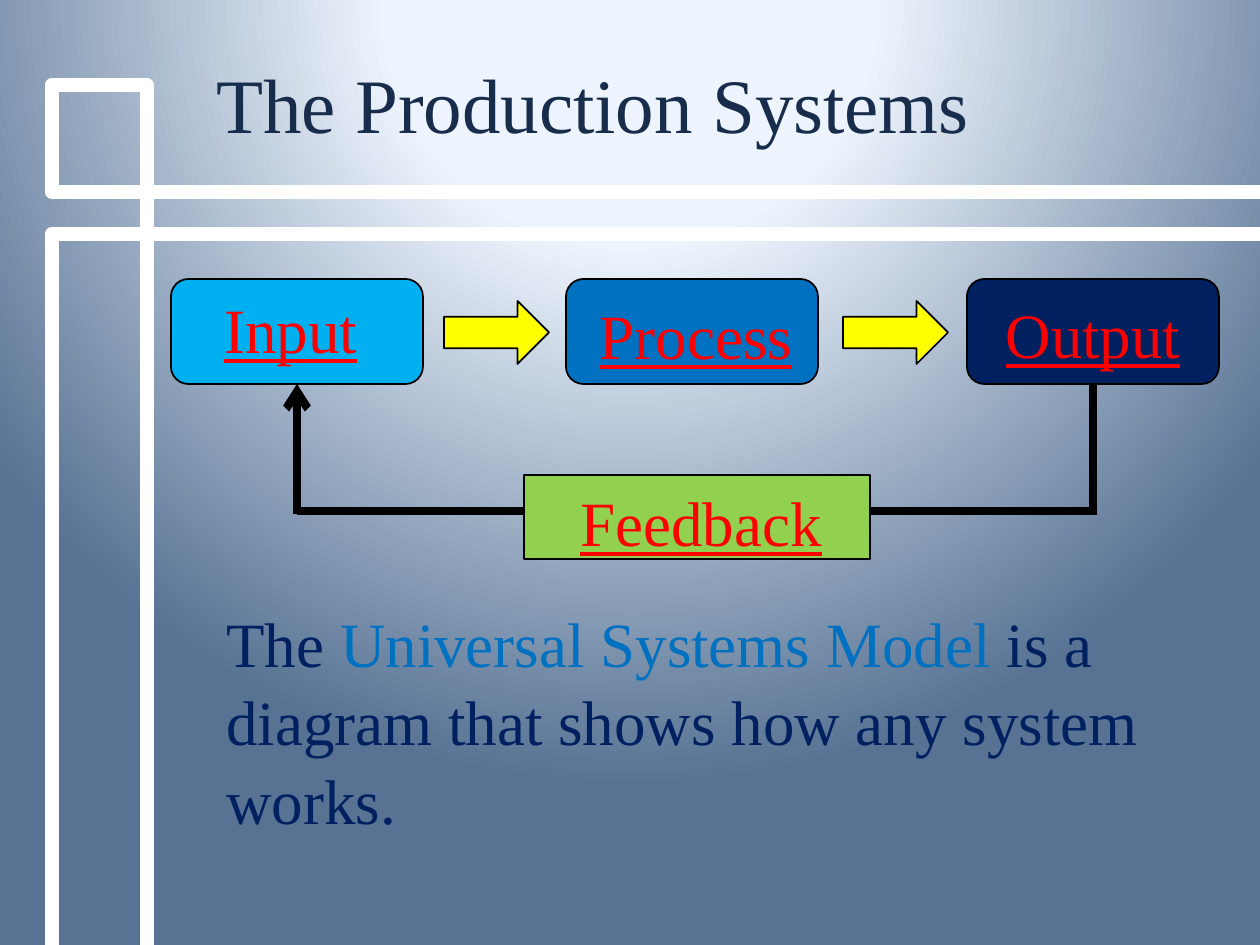
from lxml.etree import SubElement
from pptx import Presentation
from pptx.dml.color import RGBColor
from pptx.enum.shapes import MSO_CONNECTOR as CONNECTOR, MSO_SHAPE as SHAPE
from pptx.enum.text import MSO_ANCHOR as ANCHOR, PP_ALIGN as ALIGN
from pptx.oxml.ns import qn
from pptx.util import Emu, Pt

COLORS = {
    "white": "FFFFFF", "black": "000000", "title": "182C4B",
    "navy": "002060", "blue": "0070C0", "sky": "00B0F0",
    "yellow": "FFFF00", "green": "92D050", "red": "FF0000",
}
GLOW = [(0, "F0F6FE"), (31, "EDF4FD"), (100, "577293")]
EMU_PER_PX = 914400 / 126


def px(length):
    return Emu(round(length * EMU_PER_PX))


class SlideStyle:
    font = "Times New Roman"

    def __init__(self, page):
        self.page = page

    def color(self, name):
        return RGBColor.from_string(COLORS[name])

    def background(self, stops):
        self.page.background.fill.gradient()
        grad = self.page.element.find(".//" + qn("a:gradFill"))
        for child in list(grad):
            grad.remove(child)
        stop_list = SubElement(grad, qn("a:gsLst"))
        for percent, value in stops:
            stop = SubElement(stop_list, qn("a:gs"), pos=str(percent * 1000))
            SubElement(stop, qn("a:srgbClr"), val=value)
        circle = SubElement(grad, qn("a:path"), path="circle")
        SubElement(circle, qn("a:fillToRect"), l="50000", t="-80000", r="50000", b="180000")

    def outline(self, shape, color, width):
        shape.line.color.rgb = self.color(color)
        shape.line.width = Pt(width)

    def frame_line(self, points):
        builder = self.page.shapes.build_freeform(*points[0], scale=EMU_PER_PX)
        builder.add_line_segments(points[1:], close=False)
        shape = builder.convert_to_shape()
        shape.shadow.inherit = False
        shape.fill.background()
        self.outline(shape, "white", 8)
        SubElement(shape.line._get_or_add_ln(), qn("a:round"))

    def block(self, kind, left, top, width, height, fill):
        shape = self.page.shapes.add_shape(kind, px(left), px(top), px(width), px(height))
        shape.shadow.inherit = False
        shape.fill.solid()
        shape.fill.fore_color.rgb = self.color(fill)
        self.outline(shape, "black", 1)

    def link(self, start, end, arrow=False):
        line = self.page.shapes.add_connector(
            CONNECTOR.STRAIGHT, *map(px, start), *map(px, end))
        self.outline(line, "black", 4.5)
        SubElement(line._element.spPr, qn("a:effectLst"))
        if arrow:
            SubElement(line.line._get_or_add_ln(), qn("a:tailEnd"), type="arrow")

    def text(self, left, top, width, height, spans, size, anchor=ANCHOR.BOTTOM,
             align=ALIGN.LEFT, inset_top=6, underline=None, spacing=None):
        box = self.page.shapes.add_textbox(px(left), px(top), px(width), px(height))
        frame = box.text_frame
        frame.word_wrap = True
        frame.vertical_anchor = anchor
        frame.margin_top = px(inset_top)
        para = frame.paragraphs[0]
        para.alignment = align
        para.line_spacing = spacing
        for words, color in spans:
            span = para.add_run()
            span.text = words
            span.font.name = self.font
            span.font.size = Pt(size)
            span.font.underline = underline
            span.font.color.rgb = self.color(color)

    def label(self, words, left, top, width=284, align=ALIGN.CENTER):
        self.text(left, top, width, 89, [(words, "red")], 36, ANCHOR.TOP, align,
                  inset_top=14, underline=True)


def main():
    deck = Presentation()
    deck.slide_width, deck.slide_height = px(1260), px(945)
    page = deck.slides.add_slide(deck.slide_layouts[6])
    style = SlideStyle(page)

    style.background(GLOW)
    style.frame_line([(1262, 234), (52, 234), (52, 945)])
    style.frame_line([(147, 945), (147, 85), (52, 85), (52, 192), (1262, 192)])

    style.text(204, 5, 1008, 150, [("The Production Systems", "title")], 44)
    style.text(214, 693, 1008, 150, [
        ("The ", "navy"),
        ("Universal Systems Model ", "blue"),
        ("is a diagram that shows how any system works.", "navy"),
    ], 36, spacing=1.04)

    for left, fill in [(171, "sky"), (566, "blue"), (967, "navy")]:
        style.block(SHAPE.ROUNDED_RECTANGLE, left, 279, 252, 105, fill)
    for left in (444, 843):
        style.block(SHAPE.RIGHT_ARROW, left, 301, 105, 63, "yellow")

    style.link((1093, 384), (1093, 515))
    style.link((1093, 511), (297, 511))
    style.link((297, 514), (297, 384), arrow=True)
    style.block(SHAPE.RECTANGLE, 524, 475, 346, 84, "green")

    style.label("Input", 212, 277, 168, ALIGN.LEFT)
    style.label("Process", 554, 283)
    style.label("Output", 951, 282)
    style.label("Feedback", 559, 470)

    deck.save("out.pptx")


if __name__ == "__main__":
    main()
